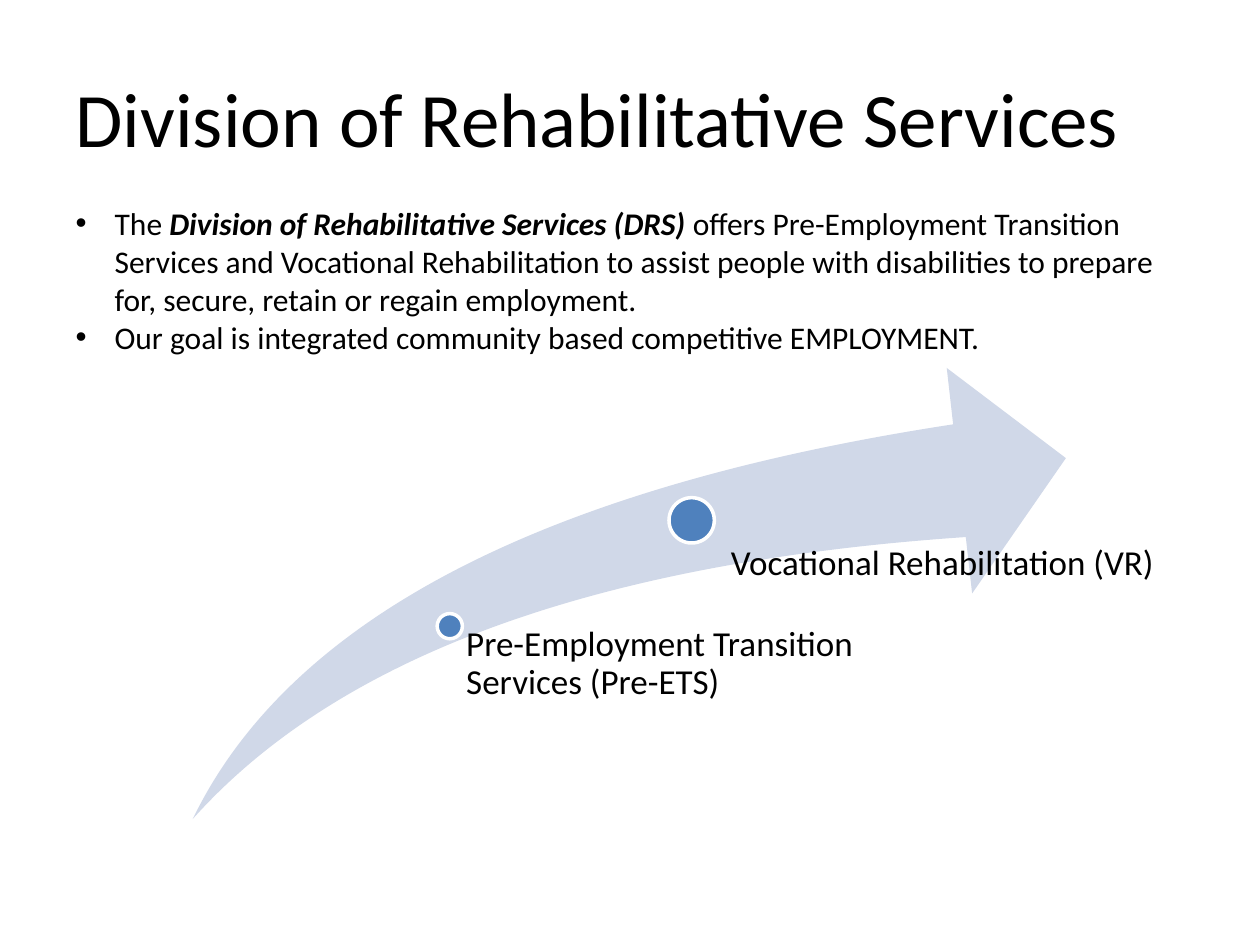
import pptx
import pptx.util
from pptx.dml.color import RGBColor
from pptx.enum.shapes import MSO_SHAPE
from pptx.enum.text import MSO_ANCHOR, MSO_AUTO_SIZE, PP_ALIGN
from pptx.oxml.xmlchemy import OxmlElement

Inches = pptx.util.Inches
Pt = pptx.util.Pt

COLORS = {
    "text": "000000",
    "arrow": "D0D8E8",
    "marker": "4F81BD",
    "outline": "FFFFFF",
}
FONT = "Calibri"

BULLETS = [
    [("The ", {}),
     ("Division of Rehabilitative Services (DRS) ", {"bold": True, "italic": True}),
     ("offers Pre-Employment Transition Services and Vocational Rehabilitation "
      "to assist people with disabilities to prepare for, secure, retain or "
      "regain employment.", {})],
    [("Our goal is integrated community based competitive EMPLOYMENT.", {})],
]

# marker left, top, diameter; label text, box, left inset
STAGES = [
    ((3.47, 4.87, 0.2), "Pre-Employment Transition Services (Pre-ETS)",
     (3.59, 4.97, 3.22, 1.53), 0.11),
    ((5.31, 3.95, 0.36), "Vocational Rehabilitation (VR)",
     (5.62, 4.33, 3.7, 1.37), 0.18),
]


def color(name):
    return RGBColor.from_string(COLORS[name])


def place(sp, left, top, width, height):
    sp.left, sp.top = Inches(left), Inches(top)
    sp.width, sp.height = Inches(width), Inches(height)


def add_run(p, text, size=18, bold=False, italic=False):
    r = p.add_run()
    r.text = text
    r.font.name = FONT
    r.font.size = Pt(size)
    r.font.bold = bold
    r.font.italic = italic
    r.font.color.rgb = color("text")


def set_bullet(p, indent=0.31):
    pPr = p._p.get_or_add_pPr()
    pPr.set("marL", str(Inches(indent)))
    pPr.set("indent", str(-Inches(indent)))
    bullet = OxmlElement("a:buChar")
    bullet.set("char", "•")
    pPr.append(bullet)


def fill_title(sp, text):
    place(sp, 0.5, 0.3, 9, 1.25)
    tf = sp.text_frame
    tf.vertical_anchor = MSO_ANCHOR.MIDDLE
    tf.paragraphs[0].alignment = PP_ALIGN.LEFT
    add_run(tf.paragraphs[0], text, size=44)


def fill_list(sp, items):
    place(sp, 0.5, 1.57, 9, 1.62)
    tf = sp.text_frame
    tf.auto_size = MSO_AUTO_SIZE.NONE
    for i, runs in enumerate(items):
        p = tf.add_paragraph() if i else tf.paragraphs[0]
        set_bullet(p)
        p.space_before = Pt(0)
        for text, style in runs:
            add_run(p, text, **style)


def add_shape(slide, kind, box, fill, outline=None):
    sp = slide.shapes.add_shape(kind, *map(Inches, box))
    sp.shadow.inherit = False
    sp.fill.solid()
    sp.fill.fore_color.rgb = color(fill)
    if outline:
        sp.line.color.rgb = color(outline)
        sp.line.width = Pt(2)
    else:
        sp.line.fill.background()
    return sp


def add_label(slide, text, box, inset):
    tf = slide.shapes.add_textbox(*map(Inches, box)).text_frame
    tf.word_wrap = True
    tf.margin_left = Inches(inset)
    tf.margin_top = tf.margin_right = tf.margin_bottom = 0
    p = tf.paragraphs[0]
    p.line_spacing = 0.9
    add_run(p, text, size=20)


def main():
    prs = pptx.Presentation()
    prs.slide_width, prs.slide_height = Inches(10), Inches(7.5)
    slide = prs.slides.add_slide(prs.slide_layouts[1])

    fill_title(slide.shapes.title, "Division of Rehabilitative Services")
    fill_list(slide.placeholders[1], BULLETS)

    arrow = add_shape(slide, MSO_SHAPE.SWOOSH_ARROW, (1.53, 2.92, 6.93, 3.58), "arrow")
    arrow.adjustments[0] = arrow.adjustments[1] = 0.25
    for (left, top, diameter), text, box, inset in STAGES:
        add_shape(slide, MSO_SHAPE.OVAL, (left, top, diameter, diameter),
                  "marker", outline="outline")
        add_label(slide, text, box, inset)

    prs.save("out.pptx")


if __name__ == "__main__":
    main()
